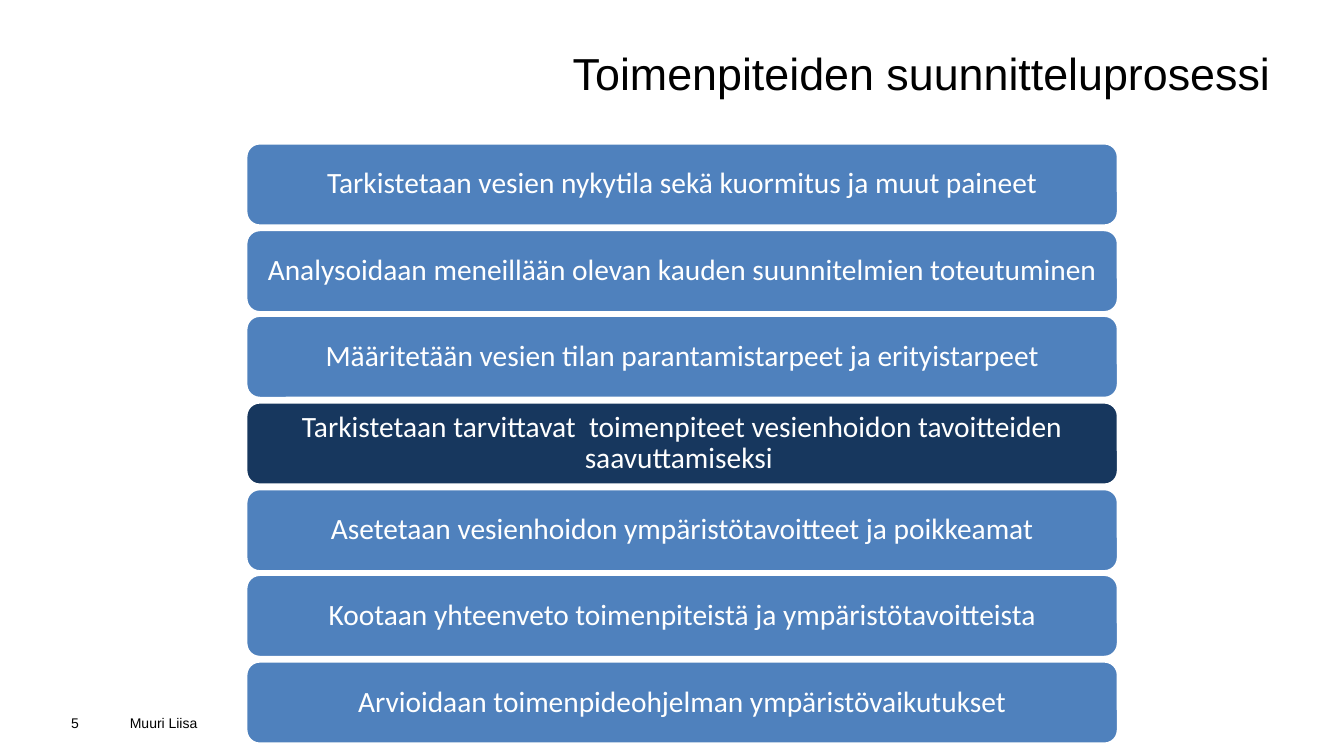
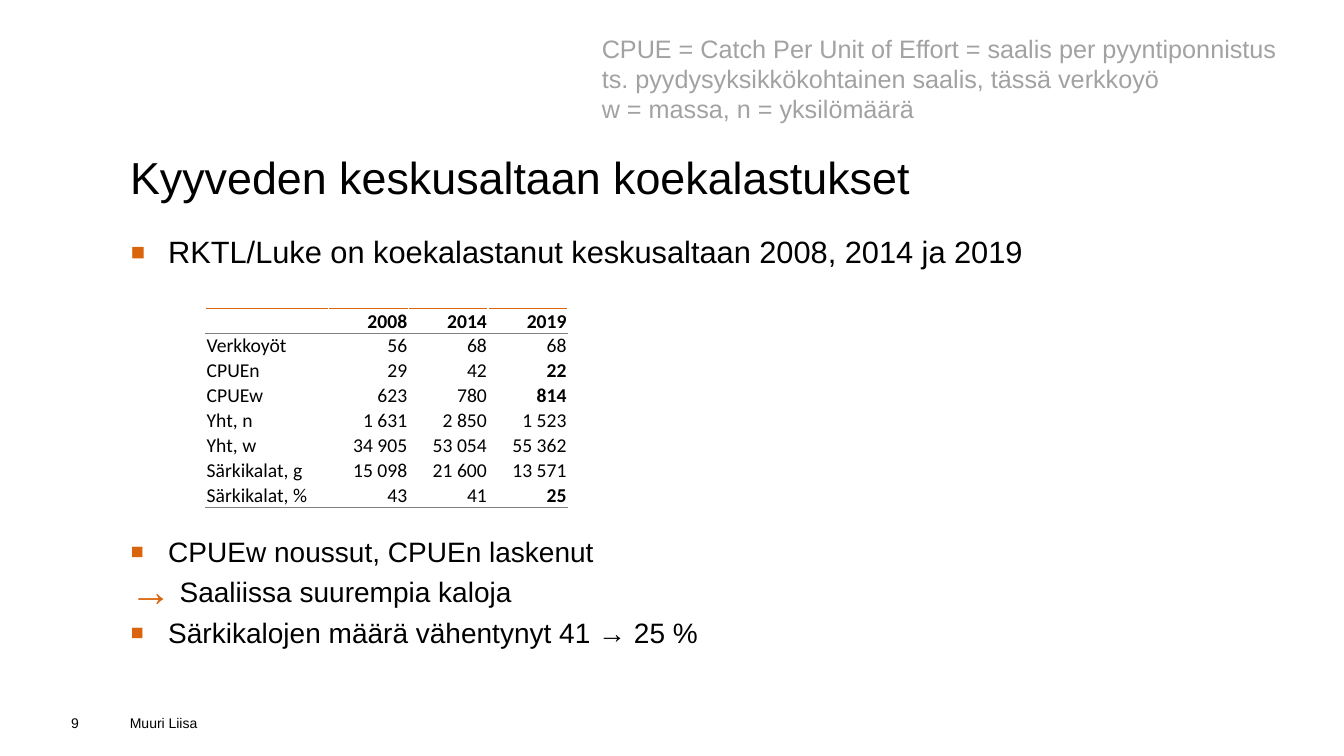
"""Build two slides on planning water measures and on test fishing."""
from dataclasses import dataclass

from lxml import etree
from pptx import Presentation
from pptx import util as u
from pptx.dml.color import RGBColor
from pptx.enum import shapes, text
from pptx.oxml.ns import qn


@dataclass(frozen=True)
class Theme:
    black: str = "000000"
    white: str = "FFFFFF"
    blue: str = "4F81BD"
    navy: str = "17375E"
    rust: str = "D9640C"
    gray: str = "A2A2A2"
    rule: str = "808080"
    sans: str = "Arial"
    alt: str = "Calibri"
    head: int = 32
    lead: int = 22
    step: int = 21
    body: int = 20
    note: int = 18
    cell: int = 14
    foot: int = 10


T = Theme()
PX = 9144
ALIGN = text.PP_ALIGN
ANCHOR = text.MSO_ANCHOR


def place(shape, left, top, width, height):
    shape.left, shape.top = left * PX, top * PX
    shape.width, shape.height = width * PX, height * PX


def write(frame, lines, size, color=T.black, font=T.sans, align=ALIGN.LEFT,
          anchor=ANCHOR.TOP, bold=False, marks=""):
    frame.word_wrap = True
    frame.auto_size = text.MSO_AUTO_SIZE.NONE
    frame.vertical_anchor = anchor
    for i, line in enumerate(lines):
        para = frame.paragraphs[0] if i == 0 else frame.add_paragraph()
        para.alignment = align
        if marks:
            props = para._p.get_or_add_pPr()
            props.set("marL", str(38 * PX))
            props.set("indent", str(-38 * PX))
            para.space_before = u.Pt(5 if i else 0)
            tint = etree.SubElement(props, qn("a:buClr"))
            etree.SubElement(tint, qn("a:srgbClr"), val=T.rust)
            etree.SubElement(props, qn("a:buSzPct"), val="150000")
            etree.SubElement(props, qn("a:buFont"), typeface=T.sans)
            etree.SubElement(props, qn("a:buChar"), char=marks[i])
        run = para.add_run()
        run.text = line
        run.font.size = u.Pt(size)
        run.font.name = font
        run.font.bold = bold
        run.font.color.rgb = RGBColor.from_string(color)


deck = Presentation()
deck.slide_width, deck.slide_height = 1333 * PX, 750 * PX

heads = [
    ("Toimenpiteiden suunnitteluprosessi", (558, 37, 767, 70), "5"),
    ("Kyyveden keskusaltaan koekalastukset", (119, 140, 1020, 70), "9"),
]
for name, spot, page in heads:
    slide = deck.slides.add_slide(deck.slide_layouts[5])
    place(slide.shapes.title, *spot)
    write(slide.shapes.title.text_frame, [name], T.head, anchor=ANCHOR.MIDDLE)
    for label, area, align in [
        ("Muuri Liisa", (119, 697, 1020, 40), ALIGN.LEFT),
        (page, (30, 698, 58, 39), ALIGN.RIGHT),
    ]:
        box = slide.shapes.add_textbox(0, 0, 0, 0)
        place(box, *area)
        write(box.text_frame, [label], T.foot, align=align,
              anchor=ANCHOR.MIDDLE)

plan, fish = deck.slides

steps = [
    "Tarkistetaan vesien nykytila sekä kuormitus ja muut paineet",
    "Analysoidaan meneillään olevan kauden suunnitelmien toteutuminen",
    "Määritetään vesien tilan parantamistarpeet ja erityistarpeet",
    "Tarkistetaan tarvittavat  toimenpiteet vesienhoidon tavoitteiden "
    "saavuttamiseksi ",
    "Asetetaan vesienhoidon ympäristötavoitteet ja poikkeamat",
    "Kootaan yhteenveto toimenpiteistä ja ympäristötavoitteista",
    "Arvioidaan toimenpideohjelman ympäristövaikutukset",
]
first, last = 142, 656
for i, step in enumerate(steps):
    top = round(first + i * (last - first) / (len(steps) - 1))
    bar = plan.shapes.add_shape(
        shapes.MSO_SHAPE.ROUNDED_RECTANGLE, 0, 0, 0, 0)
    place(bar, 244, top, 865, 82)
    bar.shadow.inherit = False
    bar.fill.solid()
    bar.fill.fore_color.rgb = RGBColor.from_string(
        T.navy if i == 3 else T.blue)
    bar.line.color.rgb = RGBColor.from_string(T.white)
    bar.line.width = u.Pt(2)
    frame = bar.text_frame
    frame.margin_left = frame.margin_right = 9 * PX
    frame.margin_top = frame.margin_bottom = 4 * PX
    write(frame, [step], T.step, T.white, T.alt, ALIGN.CENTER, ANCHOR.MIDDLE)
    frame.paragraphs[0].line_spacing = 0.9

rows = [
    ("", "2008", "2014", "2019"),
    ("Verkkoyöt", "56", "68", "68"),
    ("CPUEn", "29", "42", "22"),
    ("CPUEw", "623", "780", "814"),
    ("Yht, n", "1 631", "2 850", "1 523"),
    ("Yht, w", "34 905", "53 054", "55 362"),
    ("Särkikalat, g", "15 098", "21 600", "13 571"),
    ("Särkikalat, %", "43", "41", "25"),
]
strong = {(2, 3), (3, 3), (7, 3)}
edges = {
    0: [("a:lnT", T.rust), ("a:lnB", T.rule)],
    1: [("a:lnT", T.rule)],
    len(rows) - 1: [("a:lnB", T.rule)],
}
table = fish.shapes.add_table(
    len(rows), 4, 204 * PX, 306 * PX, 359 * PX, 195 * PX).table
table.first_row = table.horz_banding = False
for col, width in zip(table.columns, (122, 79, 79, 79)):
    col.width = width * PX
for r, row in enumerate(rows):
    table.rows[r].height = 24 * PX
    for c, value in enumerate(row):
        cell = table.cell(r, c)
        cell.margin_left = cell.margin_right = cell.margin_top = PX
        cell.margin_bottom = 0
        cell.vertical_anchor = ANCHOR.BOTTOM
        for side, color in edges.get(r, []):
            line = etree.SubElement(
                cell._tc.get_or_add_tcPr(), qn(side), w=str(u.Pt(1)))
            fill = etree.SubElement(line, qn("a:solidFill"))
            etree.SubElement(fill, qn("a:srgbClr"), val=color)
        cell.fill.background()
        para = cell.text_frame.paragraphs[0]
        para.alignment = ALIGN.RIGHT if c else ALIGN.LEFT
        if value:
            run = para.add_run()
            run.text = value
            run.font.size = u.Pt(T.cell)
            run.font.name = T.alt
            run.font.bold = r == 0 or (r, c) in strong
            run.font.color.rgb = RGBColor.from_string(T.black)
        else:
            etree.SubElement(
                para._p, qn("a:endParaRPr"), sz=str(T.cell * 100))

notes = [
    "CPUE = Catch Per Unit of Effort = saalis per pyyntiponnistus "
    "ts. pyydysyksikkökohtainen saalis, tässä verkkoyö",
    "w = massa, n = yksilömäärä",
]
lead = ["RKTL/Luke on koekalastanut keskusaltaan 2008, 2014 ja 2019"]
finds = [
    "CPUEw noussut, CPUEn laskenut",
    " Saaliissa suurempia kaloja",
    "Särkikalojen määrä vähentynyt 41 → 25 %",
]
for area, lines, size, color, marks in [
    ((587, 28, 709, 101), notes, T.note, T.gray, ""),
    ((119, 226, 1020, 50), lead, T.lead, T.black, "▪"),
    ((119, 525, 1020, 131), finds, T.body, T.black, "▪→▪"),
]:
    box = fish.shapes.add_textbox(0, 0, 0, 0)
    place(box, *area)
    write(box.text_frame, lines, size, color, marks=marks)

deck.save("out.pptx")
